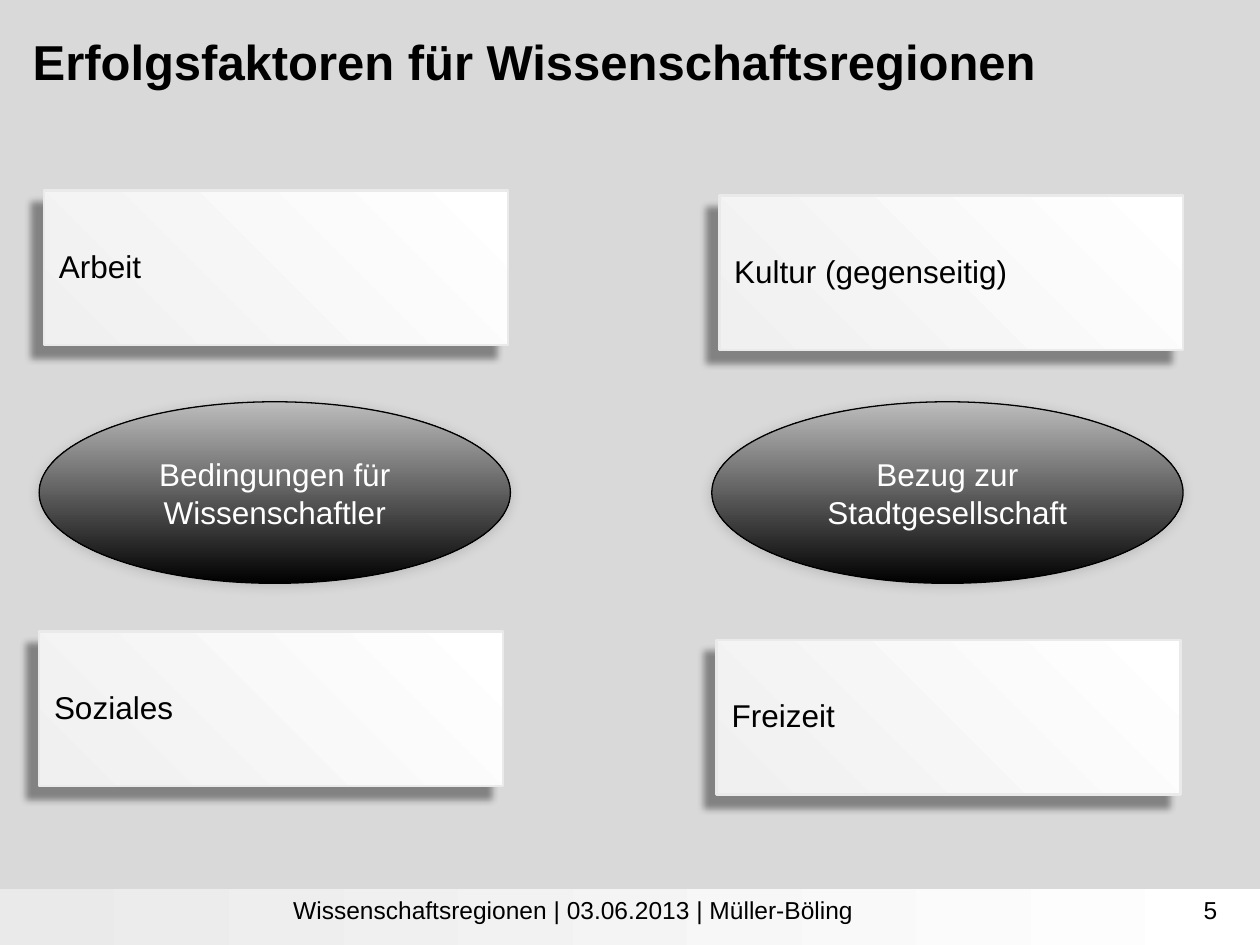
import collections
import dataclasses

import lxml.etree
import pptx
import pptx.dml.color
import pptx.enum.shapes
import pptx.enum.text
import pptx.oxml.ns
import pptx.util

Cm = pptx.util.Cm
Pt = pptx.util.Pt
ALIGN = pptx.enum.text.PP_ALIGN
ANCHOR = pptx.enum.text.MSO_ANCHOR
SHAPE = pptx.enum.shapes.MSO_SHAPE

Box = collections.namedtuple("Box", "left top width height")
Shadow = collections.namedtuple("Shadow", "opacity blur distance")


@dataclasses.dataclass(frozen=True)
class Theme:
    font: str = "Arial"
    background: str = "D9D9D9"
    text: str = "000000"
    inverse_text: str = "FFFFFF"
    card_line: str = "EAEAEA"
    ellipse_line: str = "000000"
    shadow: str = "000000"
    # Start colour, end colour, counter-clockwise angle
    bar_gradient: tuple = ("EAEAEA", "FFFFFF", 0)
    card_gradient: tuple = ("F0F0F0", "FFFFFF", 45)
    ellipse_gradient: tuple = ("000000", "BDBDBD", 90)
    title_size: int = 28
    body_size: int = 18
    footer_size: int = 14


THEME = Theme()


def rgb(value):
    return pptx.dml.color.RGBColor.from_string(value)


def set_attributes(target, values):
    for name, value in values.items():
        setattr(target, name, value)


def inside(box, left, top, width, height):
    """Return a box whose position is given relative to another box."""
    return Box(box.left + left, box.top + top, width, height)


def lengths(box):
    return [Cm(value) for value in box]


def write_text(shape, text, size, color=THEME.text, bold=False,
               frame_format=None, paragraph_format=None):
    frame = shape.text_frame
    set_attributes(frame, {"word_wrap": True, **(frame_format or {})})
    paragraph = frame.paragraphs[0]
    set_attributes(paragraph, paragraph_format or {})
    run = paragraph.add_run()
    run.text = text
    set_attributes(run.font, {"name": THEME.font, "size": Pt(size), "bold": bold})
    run.font.color.rgb = rgb(color)


def add_text(slide, box, text, size, **options):
    write_text(slide.shapes.add_textbox(*lengths(box)), text, size, **options)


def add_shadow(shape, shadow):
    """Add a shadow that falls to the lower left."""
    effects = shape.element.spPr.find(pptx.oxml.ns.qn("a:effectLst"))
    outer = lxml.etree.SubElement(
        effects, pptx.oxml.ns.qn("a:outerShdw"),
        blurRad=str(Pt(shadow.blur)), dist=str(Pt(shadow.distance)),
        dir=str(135 * 60000), algn="ctr", rotWithShape="0")
    color = lxml.etree.SubElement(outer, pptx.oxml.ns.qn("a:srgbClr"), val=THEME.shadow)
    lxml.etree.SubElement(color, pptx.oxml.ns.qn("a:alpha"), val=str(shadow.opacity * 1000))


def add_gradient_shape(slide, kind, box, gradient, line=None, shadow=None):
    shape = slide.shapes.add_shape(kind, *lengths(box))
    shape.shadow.inherit = False
    *colors, angle = gradient
    shape.fill.gradient()
    shape.fill.gradient_angle = angle
    for position, (stop, color) in enumerate(zip(shape.fill.gradient_stops, colors)):
        stop.position = position
        stop.color.rgb = rgb(color)
    if line:
        color, width = line
        shape.line.color.rgb = rgb(color)
        shape.line.width = Pt(width)
    else:
        shape.line.fill.background()
    if shadow:
        add_shadow(shape, shadow)
    return shape


def add_card(slide, box, text):
    shape = add_gradient_shape(slide, SHAPE.RECTANGLE, box, THEME.card_gradient,
                               (THEME.card_line, 1.5), Shadow(40, 4, 10))
    write_text(shape, text, THEME.body_size,
               frame_format={"vertical_anchor": ANCHOR.MIDDLE, "margin_left": Cm(0.3),
                             "margin_top": Cm(0.1), "margin_right": Cm(0.1),
                             "margin_bottom": Cm(0.1)},
               paragraph_format={"alignment": ALIGN.LEFT, "line_spacing": 0.9})


def add_ellipse(slide, box, text):
    shape = add_gradient_shape(slide, SHAPE.OVAL, box, THEME.ellipse_gradient,
                               (THEME.ellipse_line, 0.75), Shadow(15, 7, 1))
    write_text(shape, text, THEME.body_size, THEME.inverse_text,
               frame_format={"vertical_anchor": ANCHOR.MIDDLE},
               paragraph_format={"alignment": ALIGN.CENTER})


def add_factor_column(slide, box, topic, cards):
    """Place a topic ellipse and its cards, given as text, left and top."""
    add_ellipse(slide, inside(box, 0, 4.26, box.width, 3.66), topic)
    for text, left, top in cards:
        add_card(slide, inside(box, left, top, 9.35, 3.12), text)


def add_title(slide, box, text):
    add_text(slide, box, text, THEME.title_size, bold=True,
             frame_format={"margin_top": Cm(0.22)})


def add_footer(slide, box, text, number):
    add_gradient_shape(slide, SHAPE.RECTANGLE, box, THEME.bar_gradient)
    add_text(slide, inside(box, 0.41, -0.02, 22.3, 1.32), text, THEME.footer_size,
             paragraph_format={"alignment": ALIGN.CENTER})
    add_text(slide, inside(box, 18.87, -0.02, 5.92, 1.32), number, THEME.footer_size,
             paragraph_format={"alignment": ALIGN.RIGHT})


def main():
    presentation = pptx.Presentation()
    set_attributes(presentation, {"slide_width": Cm(25.4), "slide_height": Cm(19.05)})
    slide = presentation.slides.add_slide(presentation.slide_layouts[6])
    slide.background.fill.solid()
    slide.background.fill.fore_color.rgb = rgb(THEME.background)

    add_footer(slide, Box(0, 17.93, 25.4, 1.12),
               "Wissenschaftsregionen | 03.06.2013 | Müller-Böling", "5")
    add_title(slide, Box(0.41, 0.41, 24.43, 1.78),
              "Erfolgsfaktoren für Wissenschaftsregionen")
    add_factor_column(slide, Box(0.79, 3.84, 9.5, 12.2),
                      "Bedingungen für Wissenschaftler",
                      [("Arbeit", 0.1, 0), ("Soziales", 0, 8.89)])
    add_factor_column(slide, Box(14.35, 3.84, 9.5, 12.2),
                      "Bezug zur Stadtgesellschaft",
                      [("Kultur (gegenseitig)", 0.15, 0.1), ("Freizeit", 0.1, 9.06)])
    presentation.save("out.pptx")


if __name__ == "__main__":
    main()
